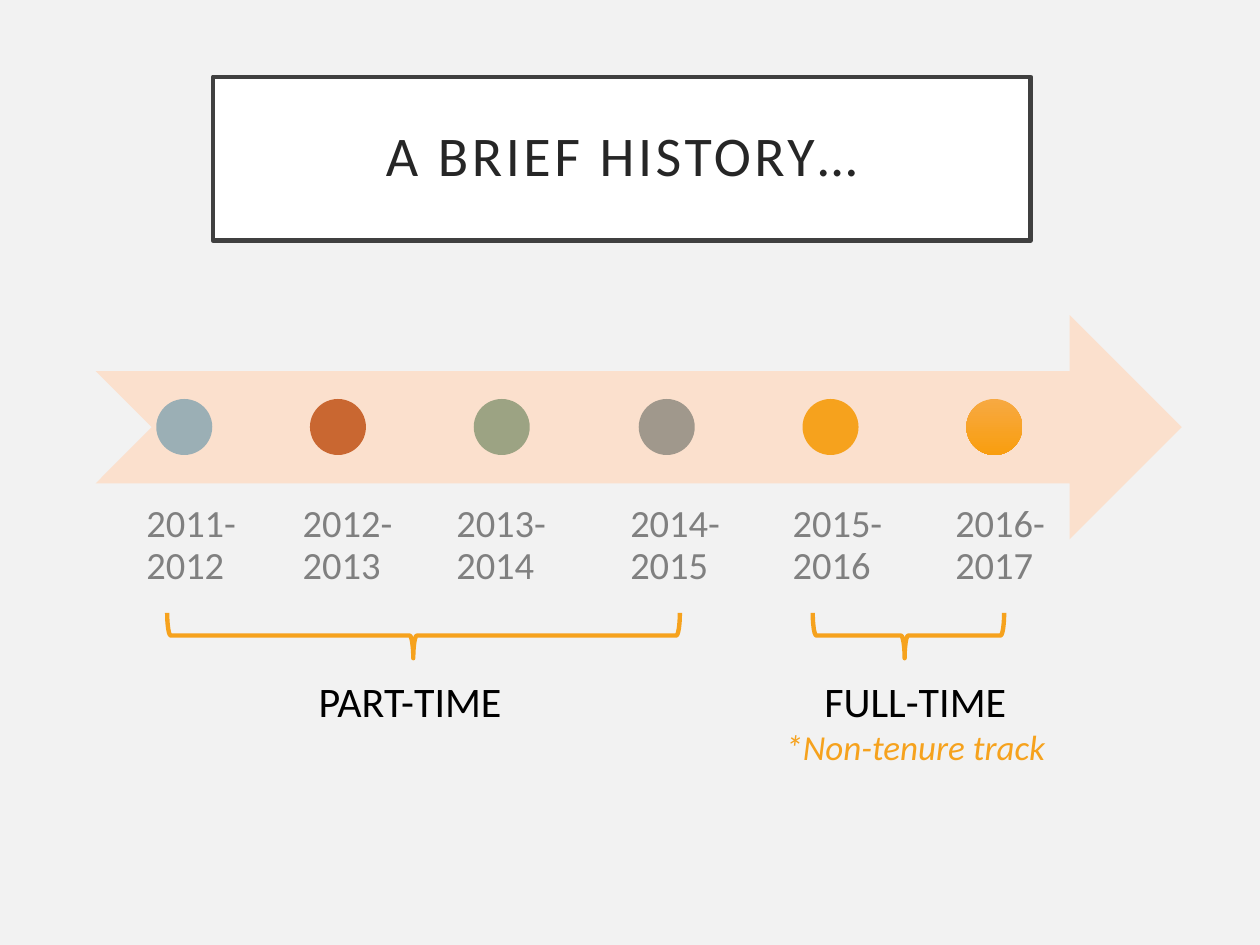
"""Build a timeline slide of part-time and full-time years."""
import pptx
import pptx.dml.color
import pptx.enum.shapes
import pptx.enum.text
import pptx.util

Pt = pptx.util.Pt
SHAPES = pptx.enum.shapes.MSO_SHAPE
CENTER = pptx.enum.text.PP_ALIGN.CENTER


def color(value):
    return pptx.dml.color.RGBColor.from_string(value)


def style_paragraph(paragraph, text, size, font_color, alignment=None):
    paragraph.text = text
    paragraph.alignment = alignment
    paragraph.font.name = "Calibri"
    paragraph.font.size = Pt(size)
    paragraph.font.color.rgb = color(font_color)


presentation = pptx.Presentation()
presentation.slide_width = Pt(720)
presentation.slide_height = Pt(540)
slide = presentation.slides.add_slide(presentation.slide_layouts[6])
slide.background.fill.solid()
slide.background.fill.fore_color.rgb = color("F2F2F2")
shapes = slide.shapes

title = shapes.add_shape(SHAPES.RECTANGLE, Pt(121.7), Pt(43.9), Pt(467.3), Pt(93.6))
title.shadow.inherit = False
title.fill.solid()
title.fill.fore_color.rgb = color("FFFFFF")
title.line.color.rgb = color("404040")
title.line.width = Pt(2.5)
title.text_frame.vertical_anchor = pptx.enum.text.MSO_ANCHOR.MIDDLE
paragraph = title.text_frame.paragraphs[0]
style_paragraph(paragraph, "A BRIEF HISTORY…", 32, "262626", CENTER)
paragraph.line_spacing = 0.9
paragraph.runs[0]._r.get_or_add_rPr().set("spc", "200")

arrow = shapes.add_shape(SHAPES.NOTCHED_RIGHT_ARROW, Pt(54.7), Pt(180), Pt(620.6), Pt(128.2))
arrow.shadow.inherit = False
arrow.fill.solid()
arrow.fill.fore_color.rgb = color("FBE0CD")
arrow.line.fill.background()

years = [
    ("2011-2012", 71.3, 89.3, "9BAFB5"),
    ("2012-2013", 160.6, 177.1, "C96731"),
    ("2013-2014", 248.4, 270.7, "9CA383"),
    ("2014-2015", 347.8, 365, "A0988C"),
    ("2015-2016", 440.6, 458.6, "F6A21D"),
    ("2016-2017", 533.5, 552.2, "F9A31A"),
]
for year, label_left, dot_left, dot_color in years:
    label = shapes.add_textbox(Pt(label_left), Pt(275.8), Pt(89.3), Pt(128.2))
    frame = label.text_frame
    frame.word_wrap = True
    frame.margin_left = frame.margin_right = Pt(12.4)
    frame.margin_top = frame.margin_bottom = Pt(12.4)
    style_paragraph(frame.paragraphs[0], year, 22, "808080")
    frame.paragraphs[0].line_spacing = 0.9

    dot = shapes.add_shape(SHAPES.OVAL, Pt(dot_left), Pt(228), Pt(32), Pt(32))
    dot.shadow.inherit = False
    dot.fill.solid()
    dot.fill.fore_color.rgb = color(dot_color)
    dot.line.fill.background()

dot.fill.gradient()
dot.fill.gradient_angle = 270
for stop, stop_color in zip(dot.fill.gradient_stops, ("F7A942", "F99E0F")):
    stop.color.rgb = color(stop_color)
for stop, position in zip(dot.fill.gradient_stops, (0, 1)):
    stop.position = position

periods = [
    ("PART-TIME", None, 151.9, 242, 293),
    ("FULL-TIME", "*Non-tenure track", 440.6, 519.1, 109.4),
]
brace_thickness, brace_middle = 25.9, 363.2
for period, remark, caption_left, brace_center, brace_length in periods:
    brace = shapes.add_shape(
        SHAPES.RIGHT_BRACE,
        Pt(brace_center - brace_thickness / 2), Pt(brace_middle - brace_length / 2),
        Pt(brace_thickness), Pt(brace_length))
    brace.rotation = 90
    brace.adjustments[0] = 0.08
    brace.adjustments[1] = 0.52
    brace.shadow.inherit = False
    brace.fill.background()
    brace.line.color.rgb = color("F6A21D")
    brace.line.width = Pt(2.5)

    caption = shapes.add_textbox(
        Pt(caption_left), Pt(382.3), Pt(164.9), Pt(60.5 if remark else 36))
    frame = caption.text_frame
    frame.word_wrap = True
    style_paragraph(frame.paragraphs[0], period, 24, "000000", CENTER)
    if remark:
        paragraph = frame.add_paragraph()
        style_paragraph(paragraph, remark, 20, "F6A21D", CENTER)
        paragraph.font.italic = True

presentation.save("out.pptx")
